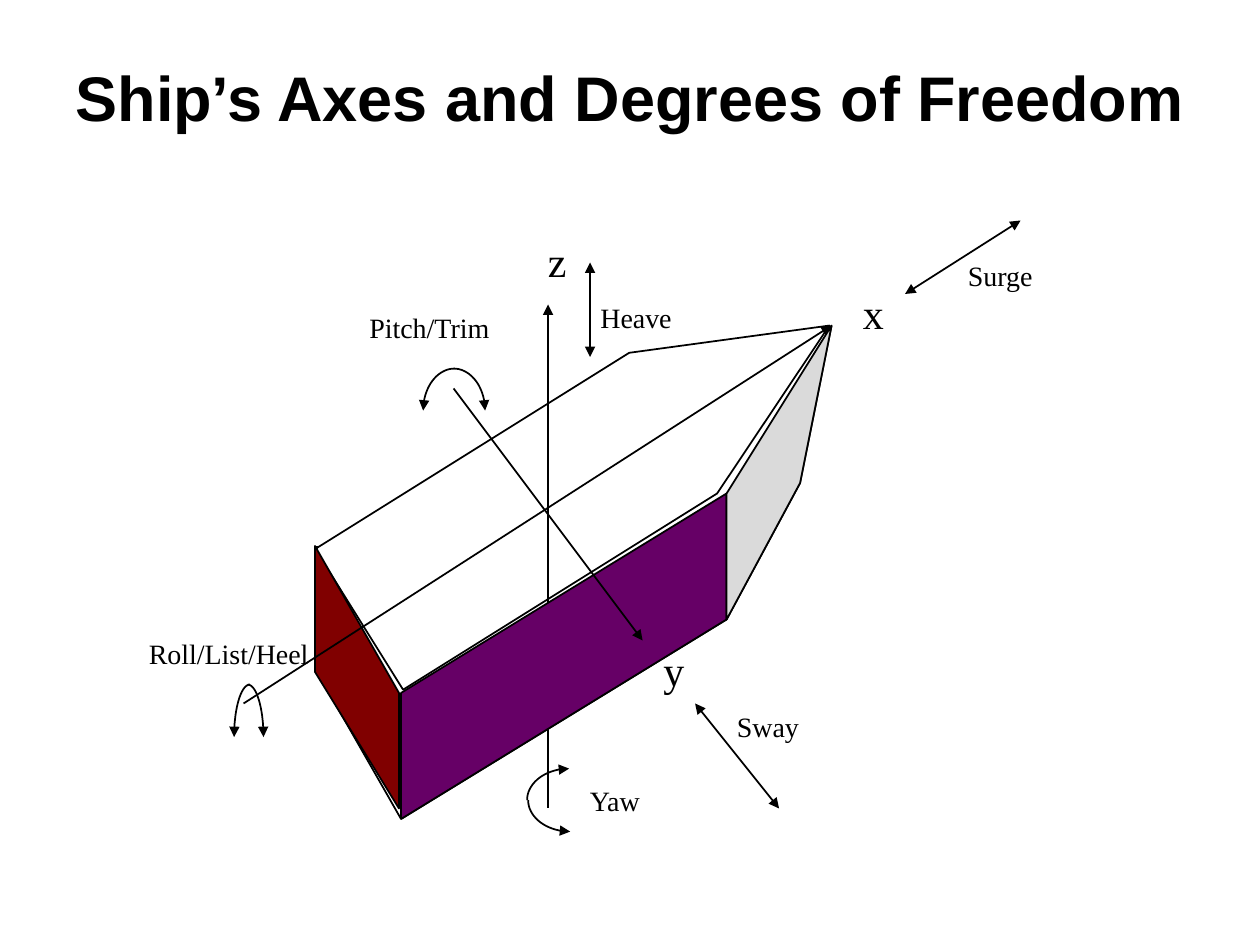
from math import cos, radians, sin

from lxml.etree import SubElement
from pptx import Presentation
from pptx.dml.color import RGBColor
from pptx.enum.shapes import MSO_CONNECTOR, MSO_SHAPE
from pptx.enum.text import MSO_AUTO_SIZE, PP_ALIGN
from pptx.oxml.ns import qn
from pptx.util import Inches, Pt

COLOURS = {"ink": "000000", "side": "660066", "stern": "800000", "bow": "DADADA"}
CELL = Inches(1) / 12  # the slide is a grid of 120 columns by 90 rows

deck = Presentation()
deck.slide_width, deck.slide_height = round(120 * CELL), round(90 * CELL)
page = deck.slides.add_slide(deck.slide_layouts[6])
shapes = page.shapes


def add_path(points, fill=None, arrows=(), close=False):
    """Line or outline through grid points, with triangles at the named ends."""
    spots = [(round(x * CELL), round(y * CELL)) for x, y in points]
    if len(spots) == 2:
        path = shapes.add_connector(MSO_CONNECTOR.STRAIGHT, *spots[0], *spots[1])
        SubElement(path._element.spPr, qn("a:effectLst"))
    else:
        builder = shapes.build_freeform(*spots[0])
        builder.add_line_segments(spots[1:], close=close)
        path = builder.convert_to_shape()
        path.shadow.inherit = False
        path.fill.background()
        if fill:
            path.fill.solid()
            path.fill.fore_color.rgb = RGBColor.from_string(COLOURS[fill])
    path.line.color.rgb = RGBColor.from_string(COLOURS["ink"])
    path.line.width = Pt(1)
    outline = path._element.spPr.find(qn("a:ln"))
    for end in arrows:
        SubElement(outline, qn(f"a:{end}"), type="triangle")


def add_label(text, left, top, width, height, size, font="Times New Roman"):
    box = shapes.add_textbox(*(round(n * CELL) for n in (left, top, width, height)))
    box.text_frame.text = text
    span = box.text_frame.paragraphs[0].runs[0]
    span.font.size, span.font.name = Pt(size), font
    span.font.color.rgb = RGBColor.from_string(COLOURS["ink"])
    return box


# Title
title = add_label("Ship’s Axes and Degrees of Freedom", 0, 5, 120, 11, 36, "Arial")
title.text_frame.word_wrap = True
para = title.text_frame.paragraphs[0]
para.alignment = PP_ALIGN.CENTER
para.space_before = Pt(7.2)
para.runs[0].font.bold = True

# Top of the hull
hull = shapes.add_shape(
    MSO_SHAPE.PENTAGON, *(round(n * CELL) for n in (30.2, 37.1, 52.8, 15.8)))
hull.adjustments[0] = 1.11
hull.rotation = 328
hull.shadow.inherit = False
hull.fill.background()
hull.line.color.rgb = RGBColor.from_string(COLOURS["ink"])
hull.line.width = Pt(1)

# Hull edges, faces and axes, from back to front: points, fill, arrowheads
bow_top, bow_foot = (79.2, 31), (76.2, 46)
side_top, side_foot = (69.2, 47), (69.2, 59)
corner_top, corner_foot = (38.2, 66), (38.2, 78)
stern_top, stern_foot = (30.2, 52), (30.2, 64)
both = ("headEnd", "tailEnd")
parts = [
    ([bow_top, bow_foot], None, ()),
    ([side_top, side_foot], None, ()),
    ([corner_top, corner_foot], None, ()),
    ([stern_top, stern_foot], None, ()),
    ([stern_foot, corner_foot], None, ()),
    ([(52.2, 29), (52.2, 77)], None, both[:1]),  # z axis
    ([side_foot, corner_foot], None, ()),
    ([corner_foot, side_foot, side_top, corner_top], "side", ()),
    ([bow_foot, side_foot], None, ()),
    ([(30, 52), (38, 66), (38, 77), (30, 64)], "stern", ()),
    ([bow_top, (23.2, 67)], None, both[:1]),  # x axis
    ([(43.2, 37), (61.2, 61)], None, both[1:]),  # y axis
    ([bow_top, bow_foot, side_foot, side_top], "bow", ()),
    ([(56.2, 25), (56.2, 34)], None, both),  # heave
    ([(86.2, 28), (97.2, 21)], None, both),  # surge
    ([(66.2, 67), (74.2, 77)], None, both),  # sway
]
for points, fill, arrows in parts:
    add_path(points, fill, arrows, close=True)

# Rotation arrows, each a quarter ellipse: centre, radii, start angle, arrowhead
quarters = [
    (43.2, 39.1, 3, 4, 270, "tailEnd"),  # pitch
    (43.3, 39.1, 3, 4, 180, "headEnd"),
    (23.6, 70.2, 1.5, 5, 270, "tailEnd"),  # roll
    (23.8, 70.2, 1.5, 5, 180, "headEnd"),
    (54.2, 76.2, 4, 3, 180, "tailEnd"),  # yaw
    (54.3, 76.2, 4, 3, 90, "headEnd"),
]
STEPS = 18
for x, y, radius_x, radius_y, start, arrow in quarters:
    angles = [radians(start + 90 * step / STEPS) for step in range(STEPS + 1)]
    curve = [(x + radius_x * cos(a), y + radius_y * sin(a)) for a in angles]
    add_path(curve, arrows=(arrow,))

# Axis letters and motion names: text, left, top, width, height, size
labels = [
    ("x", 81, 26.8, 4.3, 6, 24),
    ("y", 62, 60.8, 4.3, 6, 24),
    ("z", 51, 21.8, 4.2, 6, 24),
    ("Heave", 56, 28, 9.2, 4.3, 16),
    ("Surge", 91, 24, 8.6, 4.3, 16),
    ("Sway", 69, 67, 8.3, 4.3, 16),
    ("Pitch/Trim", 34, 29, 13.9, 4.3, 16),
    ("Roll/List/Heel", 13, 60, 17.6, 4.3, 16),
    ("Yaw", 55, 74, 7.4, 4.3, 16),
]
for label in labels:
    box = add_label(*label)
    box.text_frame.word_wrap = False
    box.text_frame.auto_size = MSO_AUTO_SIZE.SHAPE_TO_FIT_TEXT

deck.save("out.pptx")
